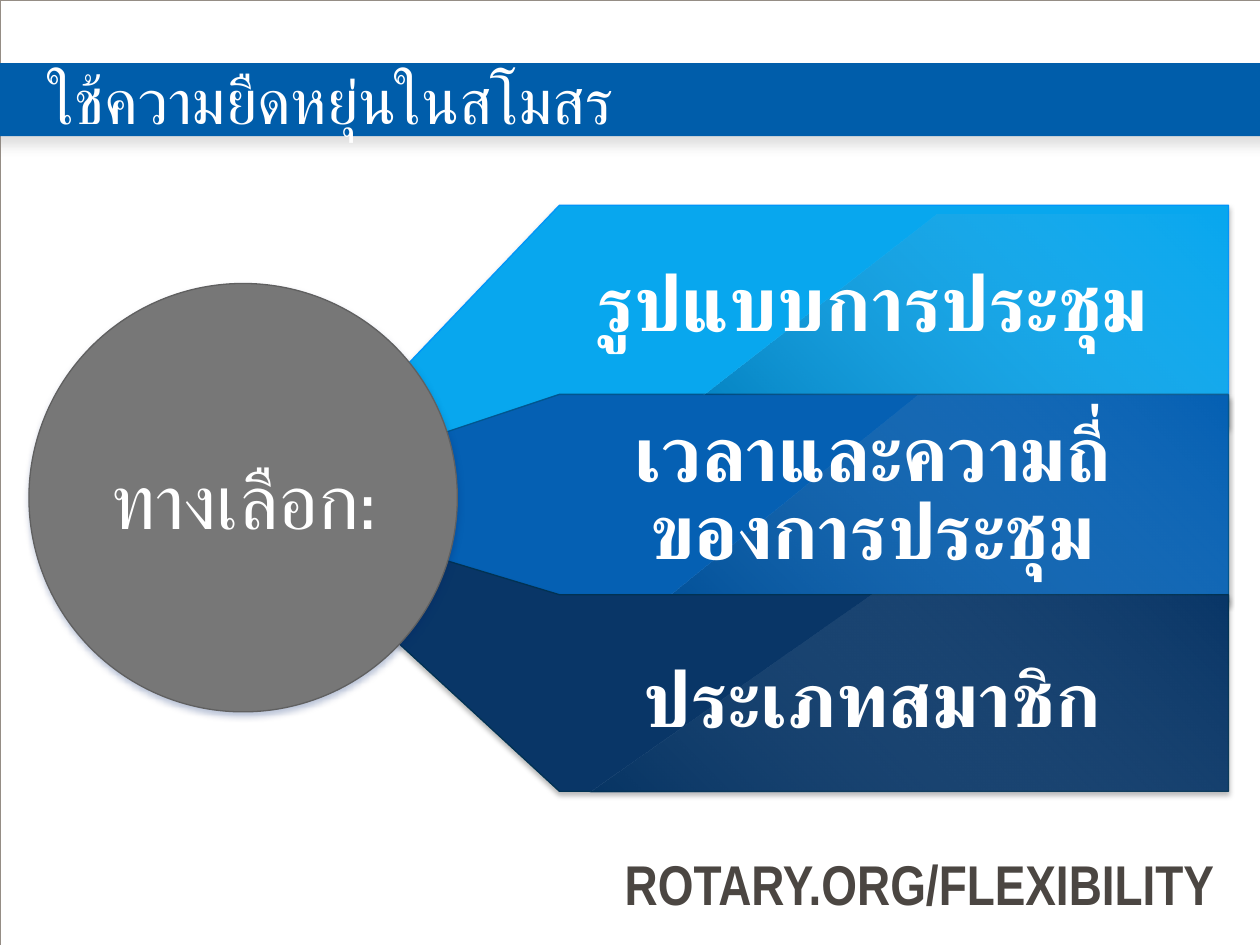
from lxml.etree import SubElement
from pptx import Presentation
from pptx.dml.color import RGBColor
from pptx.enum.shapes import MSO_SHAPE
from pptx.enum.text import MSO_ANCHOR, PP_ALIGN
from pptx.oxml.ns import qn
from pptx.util import Inches, Pt

COLORS = {
    "white": "FFFFFF", "frame": "958D85", "banner": "005DAA",
    "sky": "08A7EE", "sky_edge": "0195F9",
    "blue": "0560B3", "blue_edge": "01568F",
    "navy": "093667", "navy_edge": "013253",
    "gray": "777777", "gray_edge": "606060",
    "gloss": "01315D", "address": "4B4642",
    "black": "000000", "circle_shadow": "00246C", "banner_shadow": "808080",
}
COLUMNS, ROWS = 100, 75
BAND_SHADOW = ("black", 27, 3, 2)
TEXT_SHADOW = ("black", 43, 3, 3)


def color(name):
    return RGBColor.from_string(COLORS[name])


def add_shadow(parent, name, opacity, blur, distance):
    effects = SubElement(parent, qn("a:effectLst"))
    shadow = SubElement(effects, qn("a:outerShdw"), blurRad=str(Pt(blur)),
                        dist=str(Pt(distance)), dir="5400000", rotWithShape="0")
    tint = SubElement(shadow, qn("a:srgbClr"), val=COLORS[name])
    SubElement(tint, qn("a:alpha"), val=str(opacity * 1000))
    return effects


class SlideBuilder:
    def __init__(self, presentation):
        self.column = presentation.slide_width / COLUMNS
        self.row = presentation.slide_height / ROWS
        self.slide = presentation.slides.add_slide(presentation.slide_layouts[5])
        self.shapes = self.slide.shapes

    def box(self, left, top, width, height):
        return (round(left * self.column), round(top * self.row),
                round(width * self.column), round(height * self.row))

    def paint(self, shape, fill=None, line=None, weight=0.75, shadow=None):
        if fill:
            shape.fill.solid()
            shape.fill.fore_color.rgb = color(fill)
        else:
            shape.fill.background()
        if line:
            shape.line.color.rgb = color(line)
            shape.line.width = Pt(weight)
        else:
            shape.line.fill.background()
        if shadow:
            add_shadow(shape._element.spPr, *shadow)
        else:
            shape.shadow.inherit = False

    def preset(self, kind, area, **style):
        shape = self.shapes.add_shape(kind, *self.box(*area))
        self.paint(shape, **style)

    def outline(self, points, **style):
        corners = [(round(x * self.column), round(y * self.row)) for x, y in points]
        builder = self.shapes.build_freeform(*corners[0], scale=1.0)
        builder.add_line_segments(corners[1:], close=True)
        shape = builder.convert_to_shape()
        self.paint(shape, **style)
        return shape

    def gloss(self, points):
        shape = self.outline(points)
        shape.fill.gradient()
        shape.fill.gradient_angle = 45
        stops = zip(shape.fill.gradient_stops, ("gloss", "white"), (0, 1))
        for stop, name, position in stops:
            stop.color.rgb = color(name)
            stop.position = position
        tints = shape._element.spPr.find(qn("a:gradFill")).iter(qn("a:srgbClr"))
        for tint, opacity in zip(tints, (29, 0)):
            SubElement(tint, qn("a:alpha"), val=str(opacity * 1000))

    def add_text(self, paragraph, text, size, font="Arial", fill="white",
                 bold=False, shadow=None):
        run = paragraph.add_run()
        run.text = text
        run.font.size = Pt(size)
        run.font.name = font
        run.font.bold = bold
        run.font.color.rgb = color(fill)
        if shadow:
            properties = run._r.get_or_add_rPr()
            effects = add_shadow(properties, *shadow)
            properties.find(qn("a:solidFill")).addnext(effects)

    def text_box(self, area, align, anchor=MSO_ANCHOR.MIDDLE, inset=True):
        frame = self.shapes.add_textbox(*self.box(*area)).text_frame
        frame.word_wrap = True
        frame.vertical_anchor = anchor
        if not inset:
            self.clear_insets(frame)
        frame.paragraphs[0].alignment = align
        return frame.paragraphs[0]

    def clear_insets(self, frame):
        frame.margin_left = frame.margin_right = 0
        frame.margin_top = frame.margin_bottom = 0

    def title(self, text, area):
        title = self.shapes.title
        title.left, title.top, title.width, title.height = self.box(*area)
        frame = title.text_frame
        frame.word_wrap = True
        frame.vertical_anchor = MSO_ANCHOR.MIDDLE
        self.clear_insets(frame)
        frame.paragraphs[0].alignment = PP_ALIGN.LEFT
        self.add_text(frame.paragraphs[0], text, 36)
        self.shapes._spTree.append(title._element)

    def label(self, lines, area):
        paragraph = self.text_box(area, PP_ALIGN.CENTER, inset=False)
        if len(lines) > 1:
            paragraph.line_spacing = 0.85
        for index, line in enumerate(lines):
            if index:
                paragraph.add_line_break()
            self.add_text(paragraph, line, 44, bold=True, shadow=TEXT_SHADOW)


def main():
    presentation = Presentation()
    presentation.slide_width, presentation.slide_height = Inches(10), Inches(7.5)
    builder = SlideBuilder(presentation)

    builder.preset(MSO_SHAPE.RECTANGLE, (0, 0, COLUMNS, ROWS),
                   line="frame", weight=0.13)
    builder.preset(MSO_SHAPE.RECTANGLE, (-0.8, 5, 101.7, 5.8), fill="banner",
                   shadow=("banner_shadow", 25, 7, 4.8))

    tip, shoulder, right = 19.2, 44.4, 97.5
    bands = [("sky", 16.3, 33.9, 42.7), ("blue", 31.3, 47.8, 39.7),
             ("navy", 47.2, 62.8, 39.6)]
    for name, top, bottom, tip_row in bands:
        builder.outline([(right, top), (right, bottom), (shoulder, bottom),
                         (tip, tip_row), (shoulder, top)],
                        fill=name, line=f"{name}_edge", shadow=BAND_SHADOW)

    builder.preset(MSO_SHAPE.OVAL, (2.3, 22.5, 34, 34), fill="gray",
                   line="gray_edge", shadow=("circle_shadow", 27, 4, 2))
    choice = builder.text_box((3.3, 35.9, 32.1, 7.4), PP_ALIGN.CENTER, inset=False)
    builder.add_text(choice, "ทางเลือก", 44, shadow=TEXT_SHADOW)
    builder.add_text(choice, ":", 36, font="Arial Narrow", bold=True,
                     shadow=TEXT_SHADOW)

    builder.title("ใช้ความยืดหยุ่นในสโมสร", (3.8, 5, 95.8, 5.8))
    address = builder.text_box((44.9, 66.9, 52.5, 6.4), PP_ALIGN.RIGHT,
                               anchor=MSO_ANCHOR.TOP)
    builder.add_text(address, "ROTARY.ORG/FLEXIBILITY", 32, font="Arial Narrow",
                     fill="address", bold=True)

    glosses = [(55.8, 74.3, 97.7, 17, 31.3), (53.3, 72.8, 97.4, 31.4, 47.1),
               (46.7, 69.2, 97.6, 47.2, 62.9)]
    for low_left, high_left, edge, top, bottom in glosses:
        builder.gloss([(low_left, bottom), (edge, bottom), (edge, top),
                       (high_left, top)])

    labels = [(["รูปแบบการประชุม"], 20.2, 7.4),
              (["เวลาและความถี่", "ของการประชุม"], 33, 12.9),
              (["ประเภทสมาชิก"], 51.6, 7.4)]
    for lines, top, height in labels:
        builder.label(lines, (44.9, top, 48.7, height))

    presentation.save("out.pptx")


if __name__ == "__main__":
    main()
